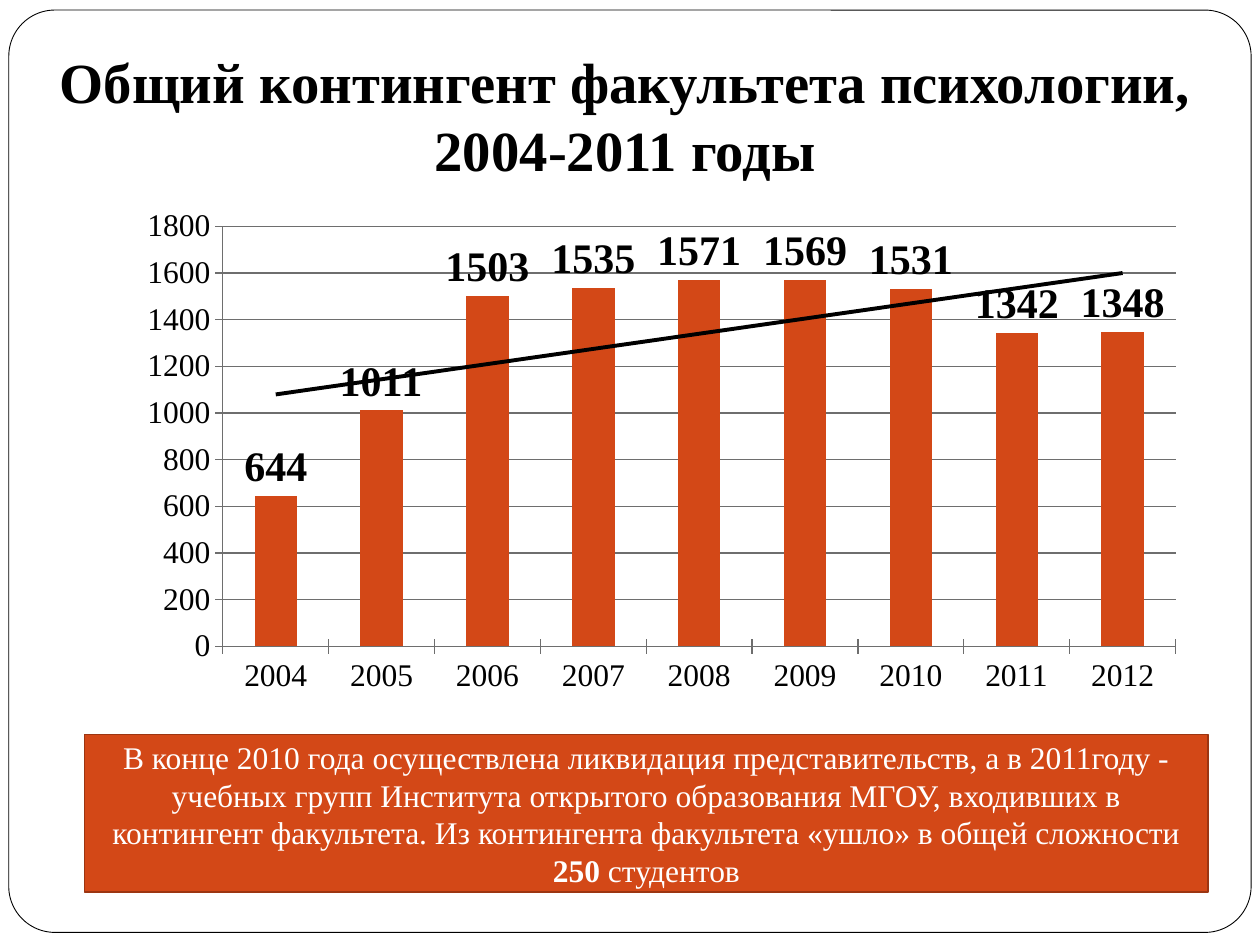
from dataclasses import dataclass

from lxml import etree
from pptx import Presentation
from pptx.chart.data import CategoryChartData
from pptx.dml.color import RGBColor
from pptx.enum.chart import XL_CHART_TYPE as Chart, XL_LABEL_POSITION as Spot, XL_TICK_MARK as Tick
from pptx.enum.shapes import MSO_SHAPE as Shape
from pptx.enum.text import MSO_ANCHOR as Anchor, MSO_AUTO_SIZE as Fit, PP_ALIGN as Align
from pptx.oxml.ns import qn
from pptx.util import Inches, Pt

TITLE = "Общий контингент факультета психологии, 2004-2011 годы"
COUNTS = {
    "2004": 644, "2005": 1011, "2006": 1503, "2007": 1535, "2008": 1571,
    "2009": 1569, "2010": 1531, "2011": 1342, "2012": 1348,
}
NOTE = [
    ("В конце 2010 года осуществлена ликвидация представительств, "
     "а в 2011году - учебных групп Института открытого образования МГОУ, "
     "входивших в контингент факультета. Из контингента факультета "
     "«ушло» в общей сложности ", False),
    ("250", True),
    (" студентов", False),
]


@dataclass(frozen=True)
class Theme:
    face: str = "Times New Roman"
    ink: str = "000000"
    paper: str = "FFFFFF"
    accent: str = "D34817"
    edge: str = "9C3511"
    grid: str = "6E6E6E"
    head: float = 32.4
    label: float = 24
    body: float = 18


THEME = Theme()
PLACES = {  # left, top, width, height in inches
    "frame": (0.07, 0.08, 9.86, 7.32),
    "title": (0.25, 0.3, 9.42, 1.25),
    "chart": (1, 1.58, 8.5, 4),
    "note": (0.67, 5.83, 8.92, 1.25),
}


def place(name):
    return [Inches(n) for n in PLACES[name]]


def rgb(code):
    return RGBColor.from_string(code)


def style(font, size, color, bold=False):
    font.name, font.size, font.bold = THEME.face, Pt(size), bold
    font.color.rgb = rgb(color)


def write(frame, runs, size, color):
    para = frame.paragraphs[0]
    para.alignment = Align.CENTER
    for text, bold in runs:
        run = para.add_run()
        run.text = text
        style(run.font, size, color, bold)


def add_box(slide, kind, name, fill, line, width):
    box = slide.shapes.add_shape(kind, *place(name))
    box.shadow.inherit = False
    box.fill.solid()
    box.fill.fore_color.rgb = rgb(fill)
    box.line.color.rgb = rgb(line)
    box.line.width = Pt(width)
    return box


def add_trend(series):
    """Give the series a linear trend line."""
    trend = etree.Element(qn("c:trendline"))
    props = etree.SubElement(trend, qn("c:spPr"))
    line = etree.SubElement(props, qn("a:ln"), w=str(Pt(2.25)))
    fill = etree.SubElement(line, qn("a:solidFill"))
    etree.SubElement(fill, qn("a:srgbClr"), val=THEME.ink)
    etree.SubElement(trend, qn("c:trendlineType"), val="linear")
    for tag in ("c:dispRSqr", "c:dispEq"):
        etree.SubElement(trend, qn(tag), val="0")
    series._element.find(qn("c:cat")).addprevious(trend)


def add_bars(slide):
    data = CategoryChartData()
    data.categories = list(COUNTS)
    data.add_series("Series 1", list(COUNTS.values()))
    chart = slide.shapes.add_chart(Chart.COLUMN_CLUSTERED, *place("chart"), data).chart
    chart.has_legend = chart.has_title = False
    style(chart.font, THEME.body, THEME.ink)
    for axis in (chart.category_axis, chart.value_axis):
        axis.major_tick_mark = Tick.CROSS
        axis.format.line.color.rgb = rgb(THEME.grid)
    chart.value_axis.major_gridlines.format.line.color.rgb = rgb(THEME.grid)
    plot = chart.plots[0]
    plot.gap_width, plot.vary_by_categories = 150, False
    series = plot.series[0]
    series.format.fill.solid()
    series.format.fill.fore_color.rgb = rgb(THEME.accent)
    labels = series.data_labels
    labels.show_value, labels.position = True, Spot.OUTSIDE_END
    style(labels.font, THEME.label, THEME.ink, True)
    add_trend(series)


def main():
    deck = Presentation()
    deck.slide_width, deck.slide_height = Inches(10), Inches(7.5)
    slide = deck.slides.add_slide(deck.slide_layouts[5])

    title = slide.shapes.title
    title.left, title.top, title.width, title.height = place("title")
    text = title.text_frame
    text.auto_size, text.word_wrap = Fit.NONE, True
    text.vertical_anchor, text.margin_bottom = Anchor.BOTTOM, Inches(0.1)
    write(text, [(TITLE, True)], THEME.head, THEME.ink)

    frame = add_box(slide, Shape.ROUNDED_RECTANGLE, "frame", THEME.paper, THEME.ink, 0.5)
    frame.adjustments[0] = 0.05
    title._element.addprevious(frame._element)

    add_bars(slide)

    note = add_box(slide, Shape.RECTANGLE, "note", THEME.accent, THEME.edge, 1)
    note.text_frame.word_wrap = True
    note.text_frame.vertical_anchor = Anchor.MIDDLE
    write(note.text_frame, NOTE, THEME.body, THEME.paper)

    deck.save("out.pptx")


if __name__ == "__main__":
    main()
